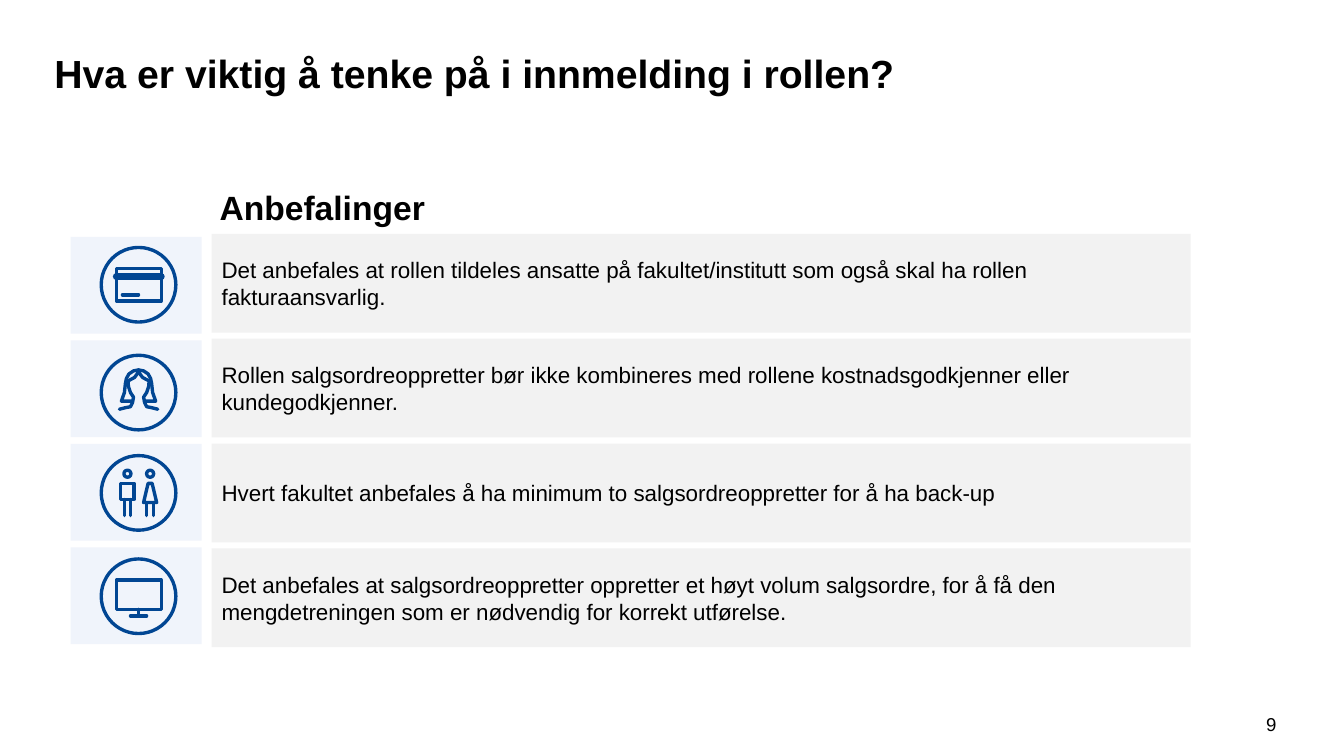
from lxml.etree import SubElement
from pptx import Presentation
from pptx.dml.color import RGBColor
from pptx.enum.shapes import MSO_CONNECTOR, MSO_SHAPE
from pptx.enum.text import MSO_ANCHOR, PP_ALIGN
from pptx.oxml.ns import qn
from pptx.util import Inches, Pt

WIDTH, HEIGHT = Inches(13.33), Inches(7.5)
ICON_UNIT = HEIGHT / 750
ICON_CENTRE = 10.31
STROKE, STRIPE = 2.4, 5

COLORS = {"text": "000000", "panel": "F2F2F2", "tile": "F0F4FB", "icon": "014693"}

FORMATS = {
    "title": {"size": Pt(28), "bold": True, "name": "Arial"},
    "heading": {"size": Pt(24), "bold": True, "name": "Arial"},
    "body": {"size": Pt(16), "bold": False, "name": "Arial"},
    "number": {"size": Pt(13.3), "bold": False, "name": "Arial"},
}

COLUMNS = {
    "panel": {"left": 15.75, "width": 72.84, "top": 30.93, "height": 13.07, "pitch": 13.87},
    "tile": {"left": 5.25, "width": 9.75, "top": 31.33, "height": 12.8, "pitch": 13.69},
}


def mirrored(strokes):
    """Return the strokes followed by their reflection in the vertical axis."""
    return strokes + [[(-x, y) for x, y in points] for points in strokes]


def box(left, top, right, bottom):
    """Return the closed outline of a rectangle."""
    return [(left, top), (right, top), (right, bottom), (left, bottom), (left, top)]


CARD = {
    "strokes": [box(-22, -16, 22.5, 16), [(-16, 10), (0, 10)]],
    "stripes": [[(-22, -8), (22.5, -8)]],
}
JUDGE = {
    "strokes": mirrored([
        [(0, -22.5), (-5, -21.5), (-9.5, -18.5), (-12, -14), (-13, -9),
         (-14, 0), (-17, 8.5), (-6, 8.5)],
        [(0, -22.5), (-1, -19), (-4, -15), (-10.5, -11.5), (-10, -6),
         (-8, 0), (-5, 4.5), (-6, 10), (-8, 14), (-13, 15), (-19, 16.5)],
    ]),
}
COUPLE = {
    "strokes": [
        box(-18, -9.5, -4.5, 6.5),
        [(9.5, -9.5), (13.5, -9.5), (18, 9.5), (5, 9.5), (9.5, -9.5)],
        *[[(x, 6.5), (x, 22.5)] for x in (-14, -8)],
        *[[(x, 9.5), (x, 22.5)] for x in (8, 15)],
    ],
    "circles": [(-11, -19, 7), (11.5, -19, 7)],
}
SCREEN = {
    "strokes": [box(-22, -16, 22.5, 13), [(0, 13), (0, 19.5)], [(-8, 19.5), (8, 19.5)]],
}

ADVICE = [
    (CARD, 37.67, "Det anbefales at rollen tildeles ansatte på fakultet/institutt "
                  "som også skal ha rollen fakturaansvarlig."),
    (JUDGE, 51.93, "Rollen salgsordreoppretter bør ikke kombineres med rollene "
                   "kostnadsgodkjenner eller kundegodkjenner."),
    (COUPLE, 65.2, "Hvert fakultet anbefales å ha minimum to salgsordreoppretter "
                   "for å ha back-up"),
    (SCREEN, 78.87, "Det anbefales at salgsordreoppretter oppretter et høyt volum "
                    "salgsordre, for å få den mengdetreningen som er nødvendig for "
                    "korrekt utførelse."),
]


def color(name):
    """Look up a named colour."""
    return RGBColor.from_string(COLORS[name])


def frame(left, top, width, height):
    """Turn percentages of the slide into a left, top, width and height."""
    return [round(share * side / 100) for share, side in
            zip((left, top, width, height), (WIDTH, HEIGHT, WIDTH, HEIGHT))]


def cell(column, row):
    """Return the frame of one row in a column of the advice grid."""
    grid = COLUMNS[column]
    return frame(grid["left"], grid["top"] + row * grid["pitch"], grid["width"], grid["height"])


def write(shape, text, style, align=PP_ALIGN.LEFT, anchor=MSO_ANCHOR.TOP):
    """Fill a shape with one formatted paragraph."""
    text_frame = shape.text_frame
    text_frame.word_wrap = True
    text_frame.vertical_anchor = anchor
    paragraph = text_frame.paragraphs[0]
    paragraph.text = text
    paragraph.alignment = align
    font = paragraph.runs[0].font
    for name, value in FORMATS[style].items():
        setattr(font, name, value)
    font.color.rgb = color("text")


def add_title(slide, text):
    """Place the title placeholder and write it."""
    title = slide.shapes.title
    for name, value in zip(("left", "top", "width", "height"), frame(3.3, 5.87, 92.12, 7.6)):
        setattr(title, name, value)
    write(title, text, "title", anchor=MSO_ANCHOR.MIDDLE)


def add_label(slide, place, text, style, align=PP_ALIGN.LEFT):
    """Add a text box."""
    write(slide.shapes.add_textbox(*frame(*place)), text, style, align)


def add_block(slide, column, row):
    """Add a filled rectangle in the advice grid."""
    block = slide.shapes.add_shape(MSO_SHAPE.RECTANGLE, *cell(column, row))
    block.shadow.inherit = False
    block.fill.solid()
    block.fill.fore_color.rgb = color(column)
    block.line.fill.background()
    return block


def outline(shape, width):
    """Give a shape a rounded icon line without shadow."""
    shape.line.color.rgb = color("icon")
    shape.line.width = Pt(width)
    shape.line._get_or_add_ln().set("cap", "rnd")


def add_circle(slide, centre, x, y, diameter):
    """Add an unfilled circle in icon units around the icon centre."""
    left, top = [round(middle + (offset - diameter / 2) * ICON_UNIT)
                 for middle, offset in zip(centre, (x, y))]
    side = round(diameter * ICON_UNIT)
    circle = slide.shapes.add_shape(MSO_SHAPE.OVAL, left, top, side, side)
    circle.shadow.inherit = False
    circle.fill.background()
    outline(circle, STROKE)


def add_stroke(slide, centre, points, width):
    """Add a straight line or an unfilled polyline in icon units."""
    places = [tuple(round(middle + offset * ICON_UNIT) for middle, offset in zip(centre, point))
              for point in points]
    if len(places) == 2:
        stroke = slide.shapes.add_connector(MSO_CONNECTOR.STRAIGHT, *places[0], *places[1])
        outline(stroke, width)
        SubElement(stroke._element.spPr, qn("a:effectLst"))
        return
    builder = slide.shapes.build_freeform(*places[0])
    builder.add_line_segments(places[1:], close=places[0] == places[-1])
    stroke = builder.convert_to_shape()
    stroke.shadow.inherit = False
    stroke.fill.background()
    outline(stroke, width)


def add_icon(slide, icon, middle):
    """Draw an icon inside its ring."""
    centre = frame(ICON_CENTRE, middle, 0, 0)[:2]
    for circle in [(0, 0, 74), *icon.get("circles", [])]:
        add_circle(slide, centre, *circle)
    for kind, width in (("strokes", STROKE), ("stripes", STRIPE)):
        for points in icon.get(kind, []):
            add_stroke(slide, centre, points, width)


def main():
    """Build and save the slide."""
    presentation = Presentation()
    presentation.slide_width, presentation.slide_height = WIDTH, HEIGHT
    slide = presentation.slides.add_slide(presentation.slide_layouts[5])
    add_title(slide, "Hva er viktig å tenke på i innmelding i rollen?")
    add_label(slide, (15.6, 24, 17.78, 6.67), "Anbefalinger", "heading")
    for row, (icon, middle, text) in enumerate(ADVICE):
        write(add_block(slide, "panel", row), text, "body", anchor=MSO_ANCHOR.MIDDLE)
        add_block(slide, "tile", row)
        add_icon(slide, icon, middle)
    add_label(slide, (92.72, 93.6, 3.75, 5.33), "9", "number", PP_ALIGN.CENTER)
    presentation.save("out.pptx")


if __name__ == "__main__":
    main()
